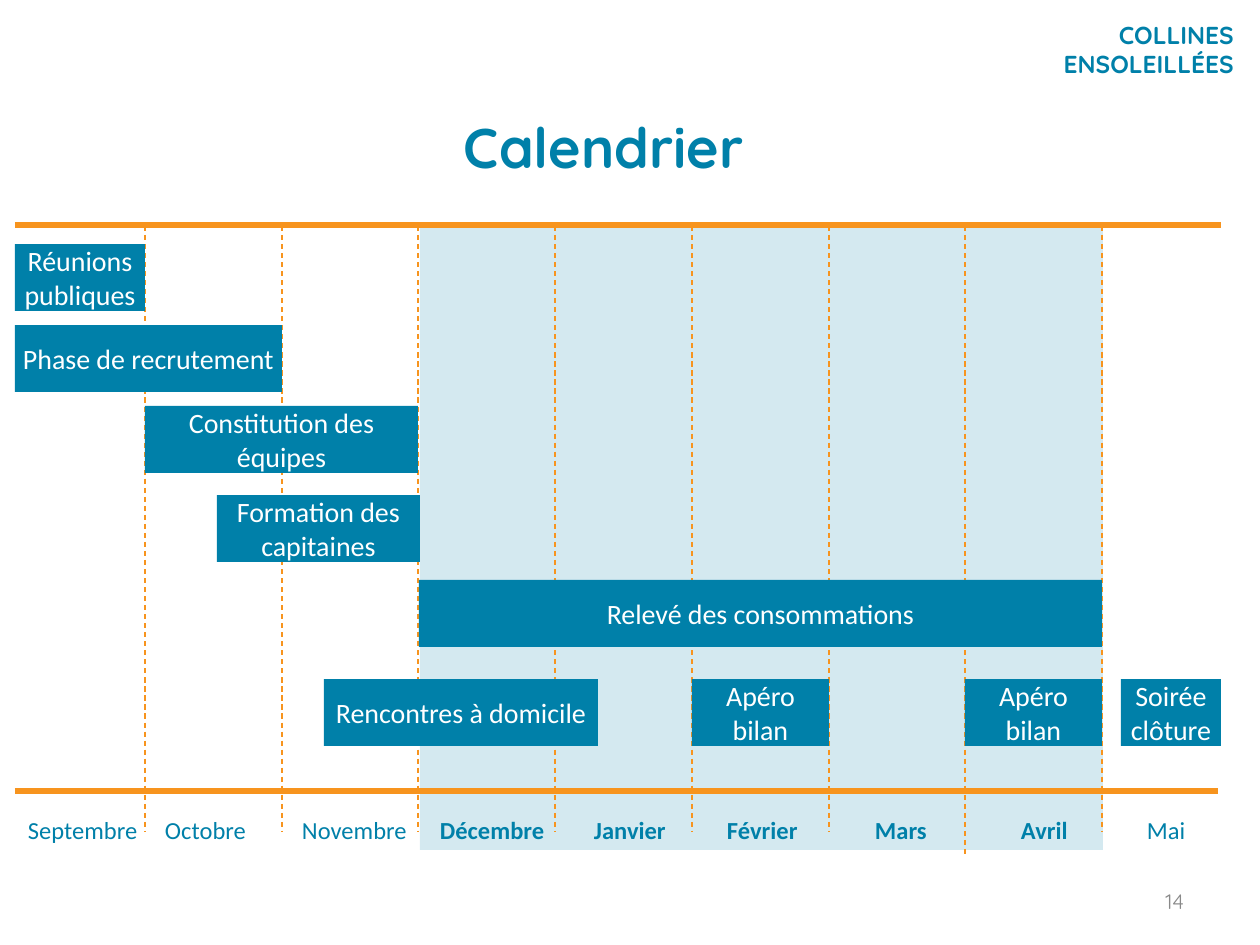
from lxml import etree
from pptx import Presentation
from pptx.dml.color import RGBColor
from pptx.enum.dml import MSO_LINE
from pptx.enum.shapes import MSO_CONNECTOR, MSO_SHAPE
from pptx.enum.text import MSO_ANCHOR, PP_ALIGN
from pptx.oxml.ns import qn
from pptx.util import Emu, Pt

RECT = MSO_SHAPE.RECTANGLE
LINE = MSO_CONNECTOR.STRAIGHT
DASH = MSO_LINE.DASH
TOP, MID = MSO_ANCHOR.TOP, MSO_ANCHOR.MIDDLE
LEFT, CENTER, RIGHT = PP_ALIGN.LEFT, PP_ALIGN.CENTER, PP_ALIGN.RIGHT
SCALE = 914400 / 126
BLUE, ORANGE, GREY, WHITE = "0080A9", "F7941E", "898989", "FFFFFF"
HEAD, BODY = "Quicksand", "Calibri"

EDGES = [145 + round(136.7 * i) for i in range(8)]
BAR_H = 67
BARS = [
    ("Réunions publiques", 15, EDGES[0], 244),
    ("Phase de recrutement", 15, EDGES[1], 325),
    ("Constitution des équipes", EDGES[0], EDGES[2], 406),
    ("Formation des capitaines", 217, 420, 495),
    ("Relevé des consommations", 419, EDGES[7], 580),
    ("Rencontres à domicile", 324, 598, 679),
    ("Apéro bilan", EDGES[4], EDGES[5], 679),
    ("Apéro bilan", EDGES[6], EDGES[7], 679),
    ("Soirée clôture", 1121, 1221, 679),
]
MONTHS = [
    ("Septembre\tOctobre\tNovembre\t", False),
    ("Décembre\tJanvier\tFévrier\tMars\tAvril\t", True),
    ("Mai", False),
]
TABS = [137, 274, 412, 566, 699, 847, 993, 1119]


def px(n):
    return Emu(round(n * SCALE))


def rgb(code):
    return RGBColor.from_string(code)


def write(frame, text, size=16, font=BODY, color=WHITE, bold=False,
          align=CENTER, anchor=MID, pad=13):
    frame.word_wrap = True
    frame.vertical_anchor = anchor
    frame.margin_left = frame.margin_right = px(pad)
    frame.margin_top = frame.margin_bottom = px(6)
    para = frame.paragraphs[0]
    para.alignment = align
    parts = [(text, bold)] if isinstance(text, str) else text
    for words, strong in parts:
        run = para.add_run()
        run.text = words
        run.font.size = Pt(size)
        run.font.name = font
        run.font.bold = strong
        run.font.color.rgb = rgb(color)
    return para


def label(slide, box, text, **style):
    shape = slide.shapes.add_textbox(*map(px, box))
    return write(shape.text_frame, text, **style)


def rect(slide, x, y, w, h):
    shape = slide.shapes.add_shape(RECT, px(x), px(y), px(w), px(h))
    shape.shadow.inherit = False
    shape.fill.solid()
    shape.fill.fore_color.rgb = rgb(BLUE)
    shape.line.fill.background()
    return shape


def band(slide, x, y, w, h, alpha):
    shape = rect(slide, x, y, w, h)
    tint = shape._element.spPr.find(".//" + qn("a:srgbClr"))
    etree.SubElement(tint, qn("a:alpha"), val=str(alpha * 1000))


def rule(slide, x1, y1, x2, y2, width, dash=None):
    line = slide.shapes.add_connector(LINE, px(x1), px(y1), px(x2), px(y2))
    line.line.color.rgb = rgb(ORANGE)
    line.line.width = Pt(width)
    if dash:
        line.line.dash_style = dash
    etree.SubElement(line._element.spPr, qn("a:effectLst"))


def bar(slide, text, x1, x2, y):
    shape = rect(slide, x1, y, x2 - x1, BAR_H)
    write(shape.text_frame, text, pad=5)


def months(slide):
    para = label(slide, (15, 809, 1203, 42), MONTHS, size=14, color=BLUE,
                 align=LEFT, anchor=TOP)
    stops = etree.SubElement(para._p.get_or_add_pPr(), qn("a:tabLst"))
    for stop in TABS:
        etree.SubElement(stops, qn("a:tab"), pos=str(px(stop)), algn="l")


def main():
    deck = Presentation()
    deck.slide_width, deck.slide_height = px(1260), px(945)
    slide = deck.slides.add_slide(deck.slide_layouts[6])
    label(slide, (1021, 14, 226, 70), "COLLINES ENSOLEILLÉES", size=14,
          font=HEAD, color=BLUE, bold=True, align=RIGHT, anchor=TOP)
    label(slide, (903, 876, 294, 50), "14", size=12, font=HEAD, color=GREY,
          align=RIGHT)
    band(slide, 420, 226, 683, 624, 17)
    rule(slide, 15, 791, 1218, 791, 3)
    rule(slide, 15, 225, 1221, 225, 3)
    for x in EDGES:
        rule(slide, x, 226, x, 854 if x == EDGES[6] else 832, 0.75, DASH)
    for item in BARS:
        bar(slide, *item)
    months(slide)
    label(slide, (37, 106, 1134, 105), "Calendrier", size=32, font=HEAD,
          color=BLUE, bold=True, anchor=TOP)
    deck.save("out.pptx")


if __name__ == "__main__":
    main()
